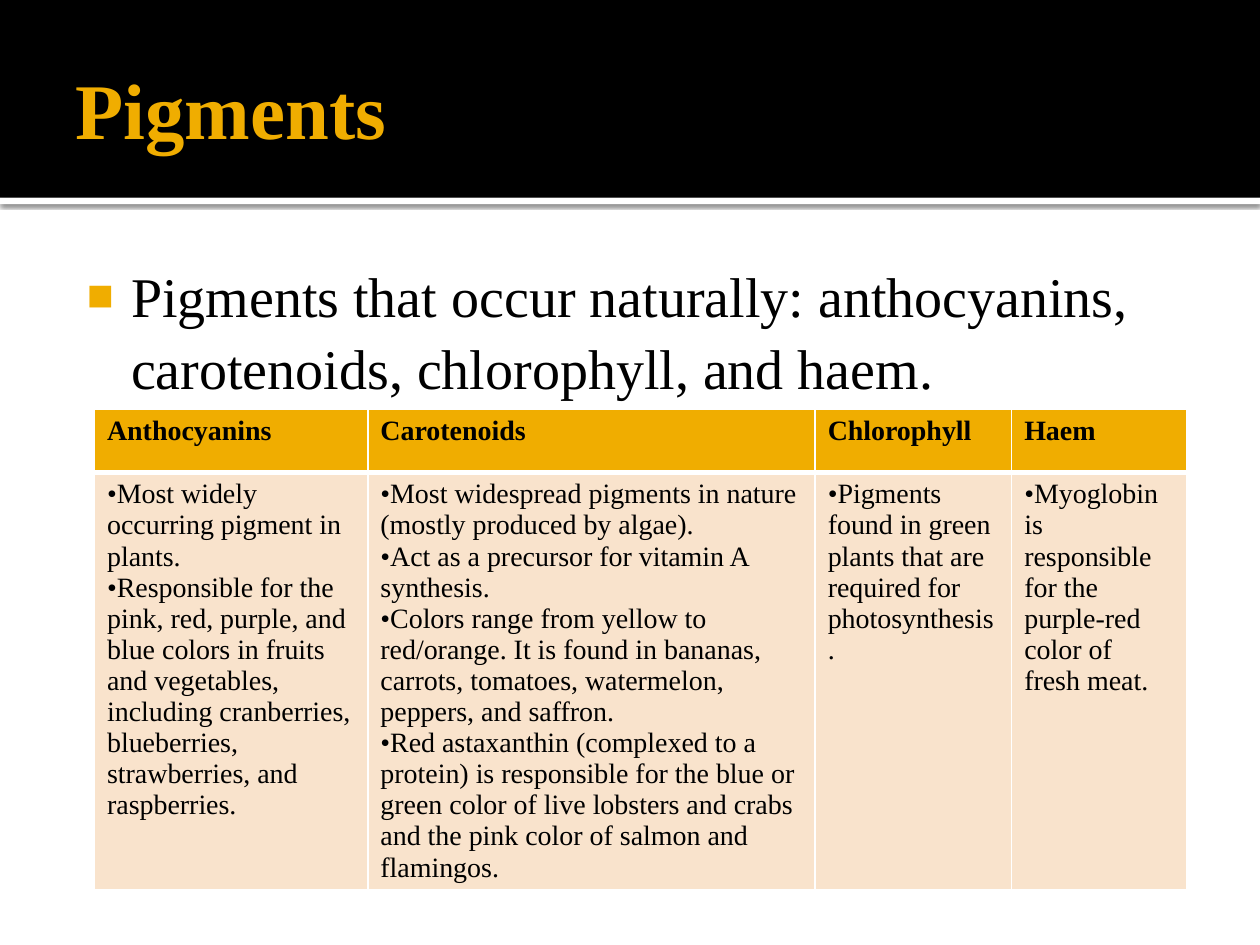
"""Build the Pigments slide: banner, one bullet and a four-column table."""
import pptx
import pptx.util
import pptx.oxml
import pptx.oxml.ns
import pptx.dml.color
import pptx.enum.shapes
import pptx.enum.text

FONT = "Times New Roman"
GOLD, PEACH, BLACK, WHITE = "F0AD00", "F9E3CC", "000000", "FFFFFF"
TITLE = "Pigments"
LEAD = "Pigments that occur naturally: anthocyanins, carotenoids, chlorophyll, and haem."
TABLE = [
    ("Anthocyanins", 2.17, [
        "Most widely occurring pigment in plants.",
        "Responsible for the pink, red, purple, and blue colors in fruits and vegetables, "
        "including cranberries, blueberries, strawberries, and raspberries."]),
    ("Carotenoids", 3.55, [
        "Most widespread pigments in nature (mostly produced by algae).",
        "Act as a precursor for vitamin A synthesis.",
        "Colors range from yellow to red/orange. It is found in bananas, carrots, "
        "tomatoes, watermelon, peppers, and saffron.",
        "Red astaxanthin (complexed to a protein) is responsible for the blue or green "
        "color of live lobsters and crabs and the pink color of salmon and flamingos."]),
    ("Chlorophyll", 1.56, [
        "Pigments found in green plants that are required for photosynthesis."]),
    ("Haem", 1.39, [
        "Myoglobin is responsible for the purple-red color of fresh meat."]),
]
ROWS = (0.5, 3.3)
BANNER, STRIP = 1.57, 0.05
inch = pptx.util.Inches


def rgb(code):
    return pptx.dml.color.RGBColor.from_string(code)


def node(base, xml):
    space = pptx.oxml.ns.nsdecls("a")
    head, tail = xml.split(" ", 1)
    item = pptx.oxml.parse_xml(f"{head} {space} {tail}")
    base.append(item)
    return item


def write(para, text, size, color=BLACK, bold=False):
    run = para.add_run()
    run.text = text
    run.font.name, run.font.size = FONT, pptx.util.Pt(size)
    run.font.bold, run.font.color.rgb = bold, rgb(color)


def bullet(para, mark, left=0, hang=0, color=BLACK, share=100):
    props = para._p.get_or_add_pPr()
    props.set("marL", str(inch(left)))
    props.set("indent", str(inch(hang)))
    node(props, f'<a:buClr ><a:srgbClr val="{color}"/></a:buClr>')
    node(props, f'<a:buSzPct val="{share * 1000}"/>')
    node(props, f'<a:buFont typeface="{FONT}"/>')
    node(props, f'<a:buChar char="{mark}"/>')


def bar(slide, top, high, color):
    kind = pptx.enum.shapes.MSO_SHAPE.RECTANGLE
    shape = slide.shapes.add_shape(kind, 0, inch(top), inch(10), inch(high))
    shape.shadow.inherit = False
    shape.fill.solid()
    shape.fill.fore_color.rgb = rgb(color)
    shape.line.fill.background()
    return shape


def place(shape, box, pads, anchor):
    shape.left, shape.top, shape.width, shape.height = map(inch, box)
    frame = shape.text_frame
    frame.word_wrap = True
    frame.auto_size = pptx.enum.text.MSO_AUTO_SIZE.NONE
    frame.vertical_anchor = anchor
    (frame.margin_left, frame.margin_top,
     frame.margin_right, frame.margin_bottom) = map(inch, pads)
    para = frame.paragraphs[0]
    para.alignment = pptx.enum.text.PP_ALIGN.LEFT
    return para


def paint(cell, color, base):
    props = cell._tc.get_or_add_tcPr()
    for side in "LRTB":
        wide = pptx.util.Pt(base if side == "B" else 1)
        node(props, f'<a:ln{side} w="{wide}"><a:solidFill>'
                    f'<a:srgbClr val="{WHITE}"/></a:solidFill></a:ln{side}>')
    cell.fill.solid()
    cell.fill.fore_color.rgb = rgb(color)


def grid(slide):
    wide = sum(col[1] for col in TABLE)
    table = slide.shapes.add_table(2, len(TABLE), inch(0.75), inch(3.25),
                                   inch(wide), inch(sum(ROWS))).table
    for row, high in zip(table.rows, ROWS):
        row.height = inch(high)
    for pos, (name, width, notes) in enumerate(TABLE):
        table.columns[pos].width = inch(width)
        head, body = table.cell(0, pos), table.cell(1, pos)
        paint(head, GOLD, 3)
        paint(body, PEACH, 1)
        write(head.text_frame.paragraphs[0], name, 16, bold=True)
        frame = body.text_frame
        for num, note in enumerate(notes):
            para = frame.add_paragraph() if num else frame.paragraphs[0]
            bullet(para, "•")
            write(para, note, 16)


def main():
    deck = pptx.Presentation()
    deck.slide_width, deck.slide_height = inch(10), inch(7.5)
    slide = deck.slides.add_slide(deck.slide_layouts[1])
    title, body = slide.placeholders
    strip = bar(slide, BANNER, STRIP, WHITE)
    glow = strip._element.spPr.find(pptx.oxml.ns.qn("a:effectLst"))
    node(glow, '<a:outerShdw blurRad="31750" dist="10160" dir="5400000" rotWithShape="0">'
               f'<a:srgbClr val="{BLACK}"><a:alpha val="60000"/></a:srgbClr></a:outerShdw>')
    banner = bar(slide, 0, BANNER, BLACK)
    for shape in (banner, strip):
        slide.shapes._spTree.insert(2, shape._element)
    anchor = pptx.enum.text.MSO_ANCHOR
    para = place(title, (0.5, 0.17, 9, 1.37), (0.1, 0.05, 0.05, 0.05), anchor.MIDDLE)
    write(para, TITLE, 45, GOLD, True)
    para = place(body, (0.5, 1.94, 9, 1.48), (0.06, 0.1, 0.1, 0.05), anchor.TOP)
    para.line_spacing = 1.07
    bullet(para, "■", 0.48, -0.35, GOLD, 80)
    write(para, LEAD, 32)
    grid(slide)
    deck.save("out.pptx")


if __name__ == "__main__":
    main()
